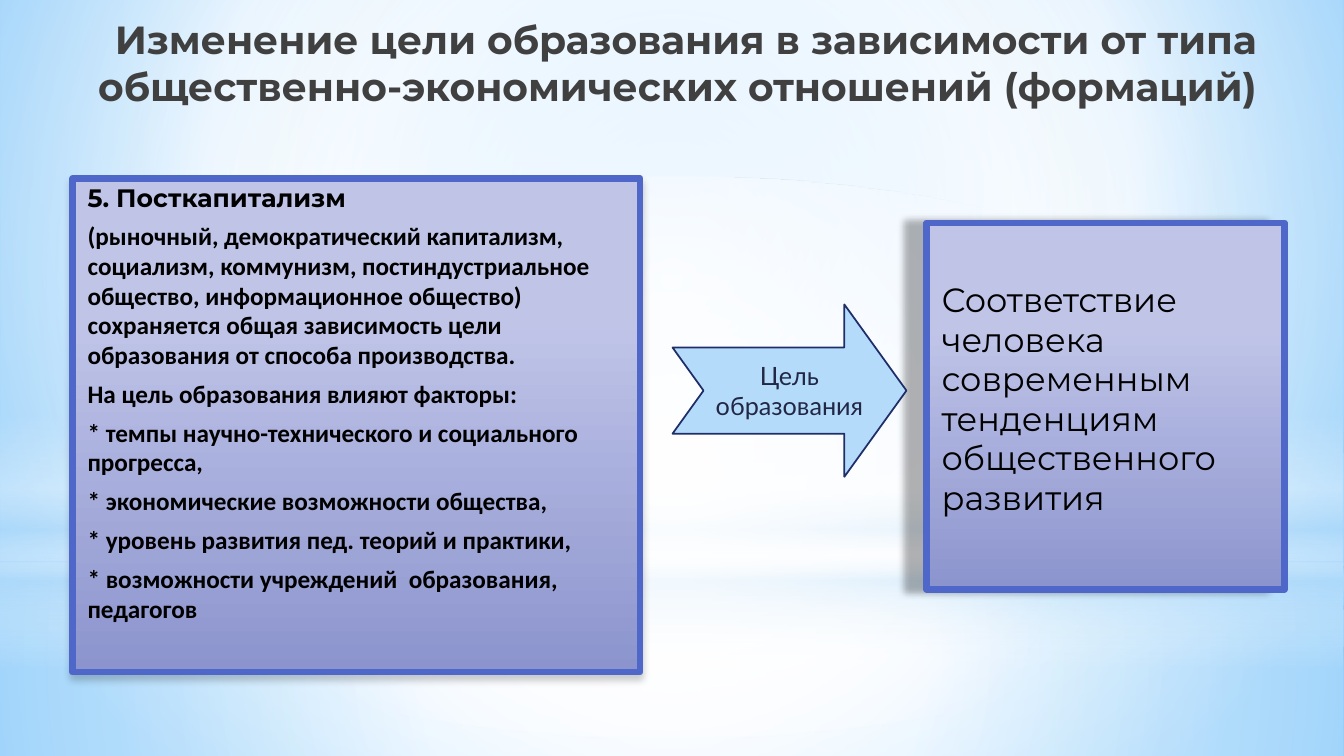
"""Build the slide on how the goal of education changes under postcapitalism."""
from lxml import etree
from pptx import Presentation
from pptx.dml.color import RGBColor
from pptx.enum.shapes import MSO_SHAPE
from pptx.enum.text import MSO_ANCHOR, PP_ALIGN
from pptx.oxml.ns import qn
from pptx.util import Inches, Pt

COLORS = {
    "white": "FFFFFF", "sky": "B4DCFA", "light_blue": "9ED5FF", "bright_blue": "5BB9FF",
    "lilac": "C0C5E8", "violet": "8C94CE", "border": "4E67C8", "navy": "1F2E69",
    "arrow_text": "212745", "title": "404040", "black": "000000",
}


def set_gradient(parent, stops, angle=None, focus=None):
    """Replace the solid fill of parent by stops of (position, color, opacity)."""
    gradient = etree.Element(qn("a:gradFill"), rotWithShape="1")
    stop_list = etree.SubElement(gradient, qn("a:gsLst"))
    for position, color, opacity in stops:
        stop = etree.SubElement(stop_list, qn("a:gs"), pos=str(position * 1000))
        tint = etree.SubElement(stop, qn("a:srgbClr"), val=COLORS[color])
        if opacity < 100:
            etree.SubElement(tint, qn("a:alpha"), val=str(opacity * 1000))
    if focus:
        circle = etree.SubElement(gradient, qn("a:path"), path="circle")
        sides = {side: str(share * 1000) for side, share in zip("ltrb", focus)}
        etree.SubElement(circle, qn("a:fillToRect"), sides)
    else:
        etree.SubElement(gradient, qn("a:lin"), ang=str(angle * 60000), scaled="0")
    parent.replace(parent.find(qn("a:solidFill")), gradient)


def style_run(paragraph, font_name, size, color, bold=False):
    """Format the only run of a paragraph."""
    font = paragraph.runs[0].font
    font.name, font.size, font.bold = font_name, Pt(size), bold
    font.color.rgb = RGBColor.from_string(COLORS[color])


prs = Presentation()
prs.slide_width, prs.slide_height = Inches(13.33), Inches(7.5)
slide = prs.slides.add_slide(prs.slide_layouts[6])

slide.background.fill.solid()
set_gradient(
    next(slide.element.iter(qn("p:bgPr"))),
    [(0, "light_blue", 100), (60, "white", 100), (100, "bright_blue", 100)],
    focus=(20, 10, 20, 60),
)

center = (50, 50, 50, 50)
glows = [
    (MSO_SHAPE.RECTANGLE, 5.58, 1.92, None, center,
     [(0, "white", 91), (37, "white", 76), (100, "sky", 79)]),
    (MSO_SHAPE.RECTANGLE, 0, 5.58, None, center,
     [(0, "white", 89), (48, "white", 62), (100, "sky", 79)]),
    (MSO_SHAPE.RECTANGLE, 4.12, 2.5, 90, None,
     [(0, "white", 0), (29, "white", 30), (45, "sky", 40),
      (55, "white", 26), (65, "sky", 60), (100, "white", 0)]),
    (MSO_SHAPE.OVAL, 1.75, 5.58, None, center,
     [(0, "white", 100), (56, "white", 0)]),
]
for outline, top, height, angle, focus, stops in glows:
    glow = slide.shapes.add_shape(outline, 0, Inches(top), prs.slide_width, Inches(height))
    glow.shadow.inherit = False
    glow.line.fill.background()
    glow.fill.solid()
    set_gradient(glow.element.spPr, stops, angle, focus)

title = slide.shapes.add_textbox(0, Inches(0.1), Inches(12.56), Inches(1.16))
title.text_frame.word_wrap = True
title.text_frame.text = (
    "Изменение цели образования в зависимости от типа "
    "общественно-экономических отношений (формаций)"
)
title.text_frame.paragraphs[0].alignment = PP_ALIGN.RIGHT
style_run(title.text_frame.paragraphs[0], "Montserrat", 28, "title", True)

formation = [
    ("5. Посткапитализм", "Montserrat", 18, True),
    ("(рыночный, демократический капитализм, социализм, коммунизм, "
     "постиндустриальное общество, информационное общество) сохраняется общая "
     "зависимость цели образования от способа производства.", "Calibri", 18, True),
    ("На цель образования влияют факторы:", "Calibri", 18, True),
    ("* темпы научно-технического и социального прогресса,", "Calibri", 18, True),
    ("* экономические возможности общества,", "Calibri", 18, True),
    ("* уровень развития пед. теорий и практики,", "Calibri", 18, True),
    ("* возможности учреждений  образования, педагогов", "Calibri", 18, True),
]
goal = [
    ("Соответствие человека современным тенденциям общественного развития",
     "Montserrat", 24, False),
]
panels = [
    ((0.72, 1.77, 5.63, 4.9), 0.05, (20, 5, 4, 90), formation),
    ((9.19, 2.21, 3.55, 3.64), 0.58, (30, 5, 14, 180), goal),
]
for place, top_inset, (opacity, blur, distance, direction), lines in panels:
    panel = slide.shapes.add_shape(MSO_SHAPE.RECTANGLE, *map(Inches, place))
    panel.fill.solid()
    set_gradient(panel.element.spPr, [(28, "lilac", 100), (100, "violet", 100)], angle=90)
    panel.line.color.rgb = RGBColor.from_string(COLORS["border"])
    panel.line.width = Pt(4.5)
    panel.shadow.inherit = False
    shadow = etree.SubElement(
        panel.element.spPr.find(qn("a:effectLst")), qn("a:outerShdw"),
        blurRad=str(Pt(blur)), dist=str(Pt(distance)), dir=str(direction * 60000),
        algn="ctr", rotWithShape="0",
    )
    shade = etree.SubElement(shadow, qn("a:srgbClr"), val=COLORS["black"])
    etree.SubElement(shade, qn("a:alpha"), val=str(opacity * 1000))
    frame = panel.text_frame
    frame.word_wrap = True
    frame.vertical_anchor = MSO_ANCHOR.TOP
    frame.margin_top = Inches(top_inset)
    frame.text = "\n".join(line[0] for line in lines)
    for paragraph, (_, font_name, size, bold) in zip(frame.paragraphs, lines):
        paragraph.alignment = PP_ALIGN.LEFT
        paragraph.line_spacing = 0.98
        paragraph.space_before = Pt(size * 0.2)
        paragraph.space_after = Pt(3)
        paragraph._p.get_or_add_pPr().set("marL", str(Inches(0.05)))
        style_run(paragraph, font_name, size, "black", bold)

arrow = slide.shapes.add_shape(
    MSO_SHAPE.NOTCHED_RIGHT_ARROW, Inches(6.67), Inches(3.02), Inches(2.32), Inches(1.71)
)
arrow.adjustments[0], arrow.adjustments[1] = 0.5, 0.36
arrow.shadow.inherit = False
arrow.fill.solid()
arrow.fill.fore_color.rgb = RGBColor.from_string(COLORS["sky"])
arrow.line.color.rgb = RGBColor.from_string(COLORS["navy"])
arrow.line.width = Pt(1.25)
arrow.text_frame.word_wrap = True
arrow.text_frame.vertical_anchor = MSO_ANCHOR.MIDDLE
arrow.text_frame.text = "Цель образования"
arrow.text_frame.paragraphs[0].alignment = PP_ALIGN.CENTER
style_run(arrow.text_frame.paragraphs[0], "Lato", 18, "arrow_text")

prs.save("out.pptx")
